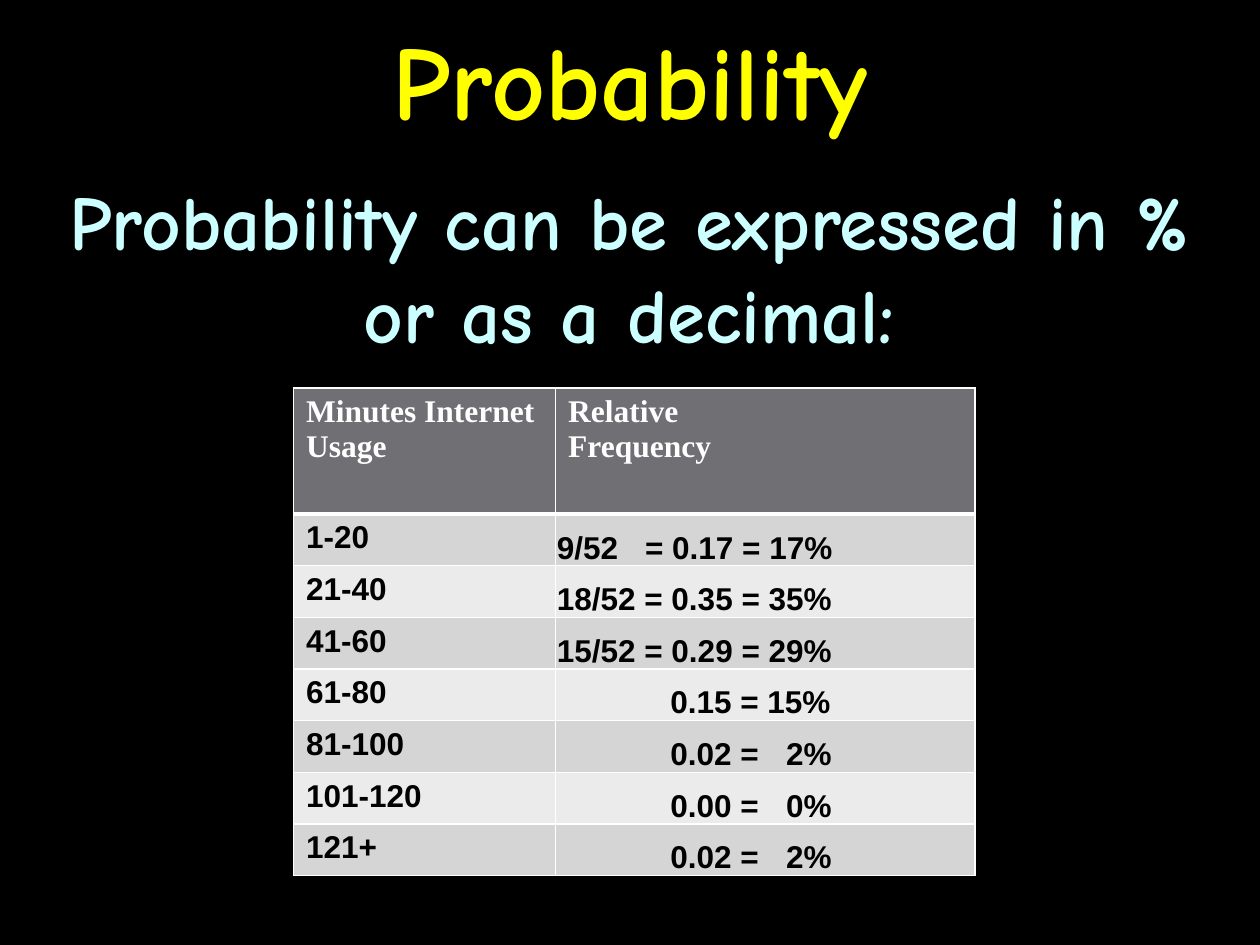
from lxml.etree import SubElement
from pptx import Presentation
from pptx.dml.color import RGBColor
from pptx.enum.text import MSO_ANCHOR, MSO_AUTO_SIZE, PP_ALIGN
from pptx.oxml.ns import qn
from pptx.util import Inches, Pt

TITLE = "Probability"
STATEMENT = "Probability can be expressed in % or as a decimal:"
HEADERS = ["Minutes Internet Usage", "Relative\nFrequency"]
# Tabs bring the equals signs, decimals and percentages into line.
ROWS = [
    ("1-20", "9/52\t= 0.17 = 17%"),
    ("21-40", "18/52 = 0.35 = 35%"),
    ("41-60", "15/52 = 0.29 = 29%"),
    ("61-80", "\t0.15 = 15%"),
    ("81-100", "\t0.02 =\t2%"),
    ("101-120", "\t0.00 =\t0%"),
    ("121+", "\t0.02 =\t2%"),
]
COLUMN_WIDTHS = [2.08, 3.33]
HEADER_HEIGHT, ROW_HEIGHT = 1, 0.41
TABLE_LEFT, TABLE_TOP = 2.33, 3.08
EQUALS_STOP, DECIMAL_STOP, PERCENT_STOP = 0.7, 0.9, 2.18
HEADER_FILL, BAND_FILLS = "6F6F74", ["D5D5D6", "EBEBEC"]
LABEL_MARGINS = (0.1, 0.05, 0.1, 0.05)
VALUE_MARGINS = (0.01, 0.01, 0.01, 0)


def color(hex_code):
    return RGBColor.from_string(hex_code)


def format_text(text_frame, font_name, size, hex_code, alignment=PP_ALIGN.LEFT):
    for paragraph in text_frame.paragraphs:
        paragraph.alignment = alignment
        font = paragraph.font
        font.name, font.size, font.bold = font_name, Pt(size), True
        font.color.rgb = color(hex_code)


def place(shape, left, top, width, height):
    shape.left, shape.top = Inches(left), Inches(top)
    shape.width, shape.height = Inches(width), Inches(height)


def set_borders(cell, top, bottom):
    """Draw white borders; top and bottom are widths in points."""
    properties = cell._tc.get_or_add_tcPr()
    for side, width in (("L", 1), ("R", 1), ("T", top), ("B", bottom)):
        line = SubElement(properties, qn(f"a:ln{side}"), w=str(Pt(width)))
        SubElement(SubElement(line, qn("a:solidFill")), qn("a:srgbClr"), val="FFFFFF")


def set_tab_stops(paragraph, stops):
    properties = paragraph._p.get_or_add_pPr()
    tab_list = properties.makeelement(qn("a:tabLst"), {})
    for position, alignment in stops:
        SubElement(tab_list, qn("a:tab"), pos=str(Inches(position)), algn=alignment)
    properties.find(qn("a:defRPr")).addprevious(tab_list)


def fill_cell(cell, text, fill, margins, font_name, text_color, borders):
    set_borders(cell, *borders)
    cell.fill.solid()
    cell.fill.fore_color.rgb = color(fill)
    (cell.margin_left, cell.margin_top,
     cell.margin_right, cell.margin_bottom) = map(Inches, margins)
    cell.text = text
    format_text(cell.text_frame, font_name, 18, text_color)


def add_frequency_table(slide):
    height = HEADER_HEIGHT + ROW_HEIGHT * len(ROWS)
    table = slide.shapes.add_table(
        len(ROWS) + 1, len(HEADERS), Inches(TABLE_LEFT), Inches(TABLE_TOP),
        Inches(sum(COLUMN_WIDTHS)), Inches(height)).table
    for column, width in zip(table.columns, COLUMN_WIDTHS):
        column.width = Inches(width)
    for index, row in enumerate(table.rows):
        row.height = Inches(ROW_HEIGHT if index else HEADER_HEIGHT)

    for column, header in enumerate(HEADERS):
        fill_cell(table.cell(0, column), header, HEADER_FILL, LABEL_MARGINS,
                  "Times New Roman", "FFFFFF", (1, 3))
    for index, (label, value) in enumerate(ROWS):
        fill = BAND_FILLS[index % 2]
        borders = (1 if index else 3, 1)
        label_cell, value_cell = table.rows[index + 1].cells
        fill_cell(label_cell, label, fill, LABEL_MARGINS, "Arial", "000000", borders)
        fill_cell(value_cell, value, fill, VALUE_MARGINS, "Arial", "000000", borders)
        value_cell.vertical_anchor = MSO_ANCHOR.BOTTOM
        first_stop = DECIMAL_STOP if value.startswith("\t") else EQUALS_STOP
        set_tab_stops(value_cell.text_frame.paragraphs[0],
                      [(first_stop, "l"), (PERCENT_STOP, "r")])


def main():
    presentation = Presentation()
    presentation.slide_width, presentation.slide_height = Inches(10), Inches(7.5)
    slide = presentation.slides.add_slide(presentation.slide_layouts[5])
    slide.background.fill.solid()
    slide.background.fill.fore_color.rgb = color("000000")

    title = slide.shapes.title
    place(title, 0, 0, 10, 1.25)
    title.text_frame.text = TITLE
    title.text_frame.auto_size = MSO_AUTO_SIZE.NONE
    title.text_frame.vertical_anchor = MSO_ANCHOR.MIDDLE
    format_text(title.text_frame, "Comic Neue", 60, "FFFF00", PP_ALIGN.CENTER)

    statement = slide.shapes.add_textbox(0, 0, 0, 0)
    place(statement, 0.33, 1.33, 9.33, 1.7)
    statement.text_frame.word_wrap = True
    statement.text_frame.text = STATEMENT
    format_text(statement.text_frame, "Comic Neue", 44, "CCFFFF", PP_ALIGN.CENTER)
    statement.text_frame.paragraphs[0].space_before = Pt(9)

    add_frequency_table(slide)
    presentation.save("out.pptx")


if __name__ == "__main__":
    main()
